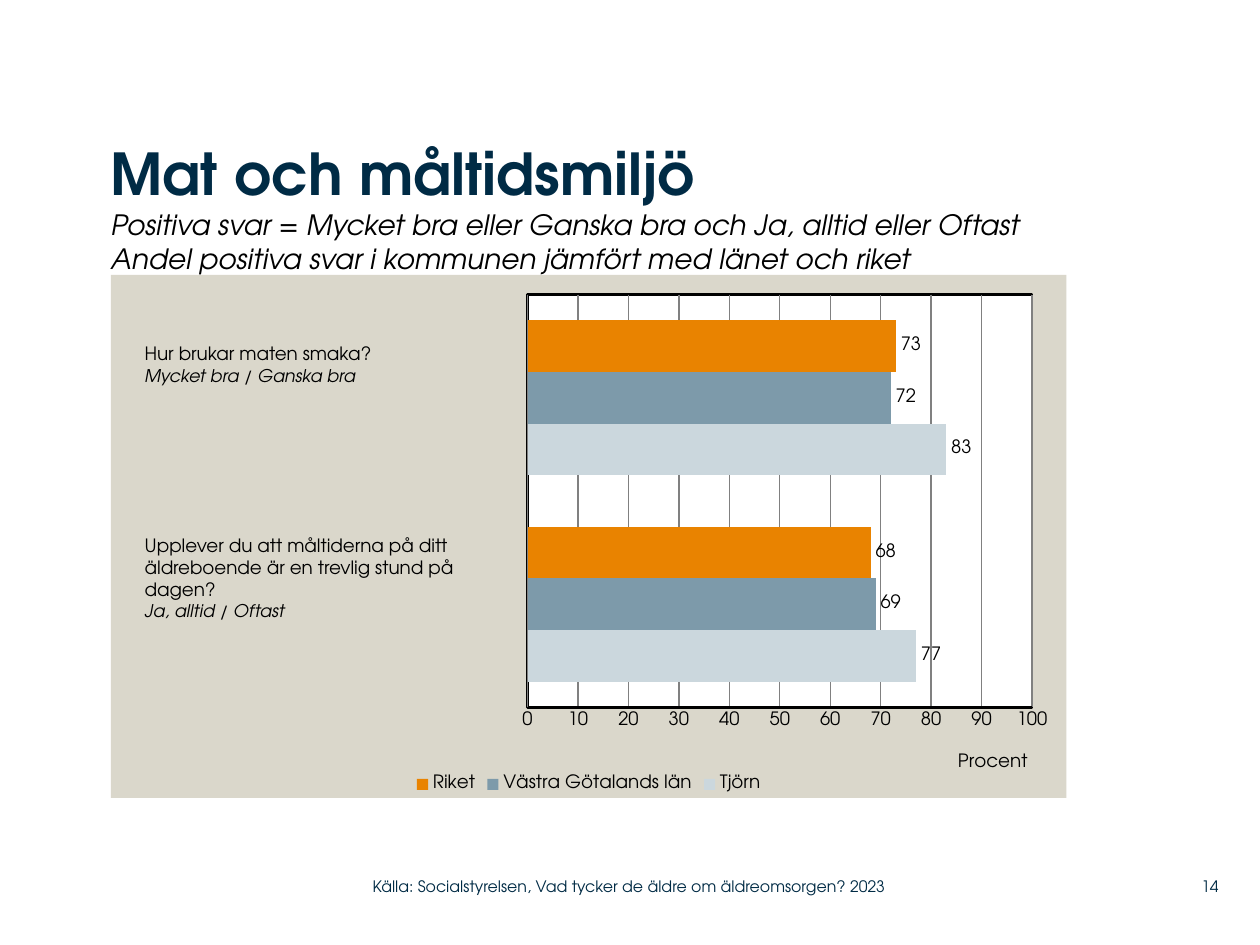
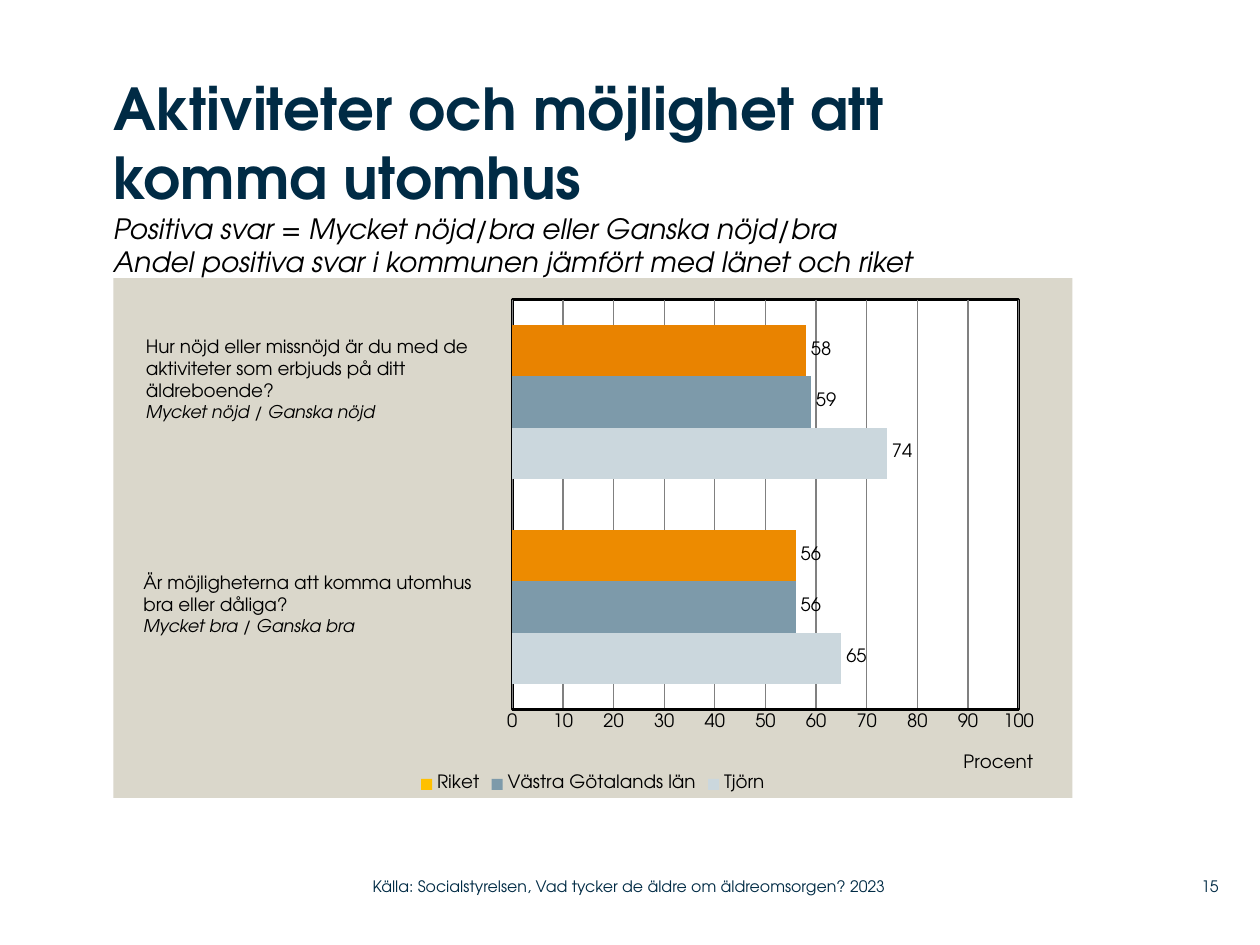
import pptx
import pptx.chart.data
import pptx.dml.color
import pptx.enum.chart
import pptx.enum.text
import pptx.oxml
import pptx.oxml.ns
import pptx.util

Pt = pptx.util.Pt

FONT = "TeX Gyre Adventor"
NAVY, BLACK, WHITE = "002B45", "000000", "FFFFFF"
PANEL, GRID = "DAD7CB", "808080"
SERIES_COLORS = {"Tjörn": "CBD7DD", "Västra Götalands län": "7D9AAA", "Riket": "E98300"}
COMPARISON = "Andel positiva svar i kommunen jämfört med länet och riket"
SOURCE = "Källa: Socialstyrelsen, Vad tycker de äldre om äldreomsorgen? 2023"

# Boxes are (left, top, width, height) in points.
SOURCE_BOX = (213, 496, 319, 21)
NUMBER_BOX = (662.4, 496, 34, 21)

SLIDES = [
    {
        "number": "14",
        "title": "Mat och måltidsmiljö",
        "criteria": "Positiva svar = Mycket bra eller Ganska bra och Ja, alltid eller Oftast",
        "title_box": (63.4, 73.5, 606, 83.5),
        "chart_box": (63.4, 157, 546, 299),
        "plot": (0.436, 0.038, 0.528, 0.789),
        "values": {"Tjörn": (77, 83), "Västra Götalands län": (69, 72), "Riket": (68, 73)},
        "colors": {},
        "point_colors": {},
        "questions": [
            ((75.6, 192.2, 199.5, 45.5),
             ["Hur brukar maten smaka?"], "Mycket bra / Ganska bra"),
            ((75.6, 301.7, 199.5, 70.5),
             ["Upplever du att måltiderna på ditt äldreboende är en trevlig stund på",
              "dagen?"], "Ja, alltid / Oftast"),
        ],
    },
    {
        "number": "15",
        "title": "Aktiviteter och möjlighet att komma utomhus",
        "criteria": "Positiva svar = Mycket nöjd/bra eller Ganska nöjd/bra",
        "title_box": (64.8, 35, 561.5, 124),
        "chart_box": (64.8, 159, 548, 297),
        "plot": (0.416, 0.041, 0.528, 0.789),
        "values": {"Tjörn": (65, 74), "Västra Götalands län": (56, 59), "Riket": (56, 58)},
        "colors": {"Riket": "FFC000"},
        "point_colors": {"Riket": ("ED8B00", "E98300")},
        "questions": [
            ((76.3, 188, 216, 70.5),
             ["Hur nöjd eller missnöjd är du med de aktiviteter som erbjuds på ditt "
              "äldreboende?"], "Mycket nöjd / Ganska nöjd"),
            ((74.9, 322.6, 216.7, 58.3),
             ["Är möjligheterna att komma utomhus", "bra eller dåliga?"],
             "Mycket bra / Ganska bra"),
        ],
    },
]


def rgb(color):
    return pptx.dml.color.RGBColor.from_string(color)


def points(box):
    return [Pt(length) for length in box]


def style_font(font, size, color=BLACK, bold=False, italic=False):
    font.name, font.size = FONT, Pt(size)
    font.bold, font.italic = bold, italic
    font.color.rgb = rgb(color)


def fill_solid(fill, color):
    fill.solid()
    fill.fore_color.rgb = rgb(color)


def add_text(slide, box, lines, anchor="TOP", align="LEFT", inset=True):
    """Add a text box; each line is (text, font settings) and becomes a paragraph."""
    frame = slide.shapes.add_textbox(*points(box)).text_frame
    frame.word_wrap = True
    frame.vertical_anchor = pptx.enum.text.MSO_ANCHOR[anchor]
    if not inset:
        frame.margin_left = frame.margin_top = frame.margin_right = frame.margin_bottom = 0
    frame.text = "\n".join(text for text, _ in lines)
    for paragraph, (_, settings) in zip(frame.paragraphs, lines):
        paragraph.alignment = pptx.enum.text.PP_ALIGN[align]
        for run in paragraph.runs:
            style_font(run.font, **settings)


def chart_xml(body):
    """Parse one chart element, given without namespace declarations."""
    tag, rest = body.split(">", 1)
    return pptx.oxml.parse_xml(f"{tag} {pptx.oxml.ns.nsdecls('c', 'a')}>{rest}")


def manual_layout(x, y, size=None):
    target, extent = "", ""
    if size:
        target = '<c:layoutTarget val="inner"/>'
        extent = f'<c:w val="{size[0]}"/><c:h val="{size[1]}"/>'
    return chart_xml(
        f'<c:layout><c:manualLayout>{target}<c:xMode val="edge"/><c:yMode val="edge"/>'
        f'<c:x val="{x}"/><c:y val="{y}"/>{extent}</c:manualLayout></c:layout>')


def area_style(fill, line):
    return chart_xml(
        f'<c:spPr><a:solidFill><a:srgbClr val="{fill}"/></a:solidFill>{line}</c:spPr>')


def set_layout(parent, layout, index):
    for old in parent.findall(pptx.oxml.ns.qn("c:layout")):
        parent.remove(old)
    parent.insert(index, layout)


def style_areas(chart, plot):
    chart_part = chart.element.find(pptx.oxml.ns.qn("c:chart"))
    chart_part.addnext(area_style(PANEL, "<a:ln><a:noFill/></a:ln>"))
    plot_area = chart_part.find(pptx.oxml.ns.qn("c:plotArea"))
    set_layout(plot_area, manual_layout(plot[0], plot[1], plot[2:]), 0)
    border = f'<a:ln w="{Pt(1.5)}"><a:solidFill><a:srgbClr val="{BLACK}"/></a:solidFill></a:ln>'
    plot_area.append(area_style(WHITE, border))


def style_axes(chart):
    chart.category_axis.visible = False
    axis = chart.value_axis
    axis.minimum_scale, axis.maximum_scale, axis.major_unit = 0, 100, 10
    axis.major_tick_mark = axis.minor_tick_mark = pptx.enum.chart.XL_TICK_MARK.NONE
    axis.format.line.color.rgb = rgb(BLACK)
    axis.format.line.width = Pt(2)
    axis.major_gridlines.format.line.color.rgb = rgb(GRID)
    axis.major_gridlines.format.line.width = Pt(0.75)
    style_font(axis.tick_labels.font, 10.5)
    paragraph = axis.axis_title.text_frame.paragraphs[0]
    paragraph.text = "Procent"
    style_font(paragraph.runs[0].font, 10.5)
    set_layout(axis.axis_title.element, manual_layout(0.883, 0.907), 1)


def add_result_chart(slide, content):
    data = pptx.chart.data.CategoryChartData()
    data.categories = ["1", "2"]
    for name, values in content["values"].items():
        data.add_series(name, values)
    chart = slide.shapes.add_chart(
        pptx.enum.chart.XL_CHART_TYPE.BAR_CLUSTERED, *points(content["chart_box"]), data).chart
    chart.has_title = False
    style_font(chart.font, 10.5)
    chart.has_legend = True
    chart.legend.position = pptx.enum.chart.XL_LEGEND_POSITION.BOTTOM
    chart.legend.include_in_layout = False
    style_font(chart.legend.font, 10.5)
    style_axes(chart)

    plot = chart.plots[0]
    plot.gap_width, plot.overlap, plot.vary_by_categories = 100, 0, False
    colors = {**SERIES_COLORS, **content["colors"]}
    for series in plot.series:
        fill_solid(series.format.fill, colors[series.name])
        for index, color in enumerate(content["point_colors"].get(series.name, ())):
            fill_solid(series.points[index].format.fill, color)
        labels = series.data_labels
        labels.show_value = True
        labels.position = pptx.enum.chart.XL_LABEL_POSITION.OUTSIDE_END
        style_font(labels.font, 10.5)
    style_areas(chart, content["plot"])


def add_result_slide(presentation, content):
    slide = presentation.slides.add_slide(presentation.slide_layouts[6])
    add_result_chart(slide, content)
    subtitle = {"size": 16, "italic": True}
    add_text(slide, content["title_box"], [
        (content["title"], {"size": 33, "color": NAVY, "bold": True}),
        (content["criteria"], subtitle),
        (COMPARISON, subtitle),
    ], anchor="BOTTOM", inset=False)
    for box, question, answers in content["questions"]:
        lines = [(text, {"size": 10.5}) for text in question]
        add_text(slide, box, lines + [(answers, {"size": 10, "italic": True})])
    footer = {"size": 9, "color": NAVY}
    add_text(slide, NUMBER_BOX, [(content["number"], footer)], "MIDDLE", "RIGHT", inset=False)
    add_text(slide, SOURCE_BOX, [(SOURCE, footer)], "MIDDLE", inset=False)


def main():
    presentation = pptx.Presentation()
    presentation.slide_width, presentation.slide_height = Pt(720), Pt(540)
    for content in SLIDES:
        add_result_slide(presentation, content)
    presentation.save("out.pptx")


if __name__ == "__main__":
    main()
